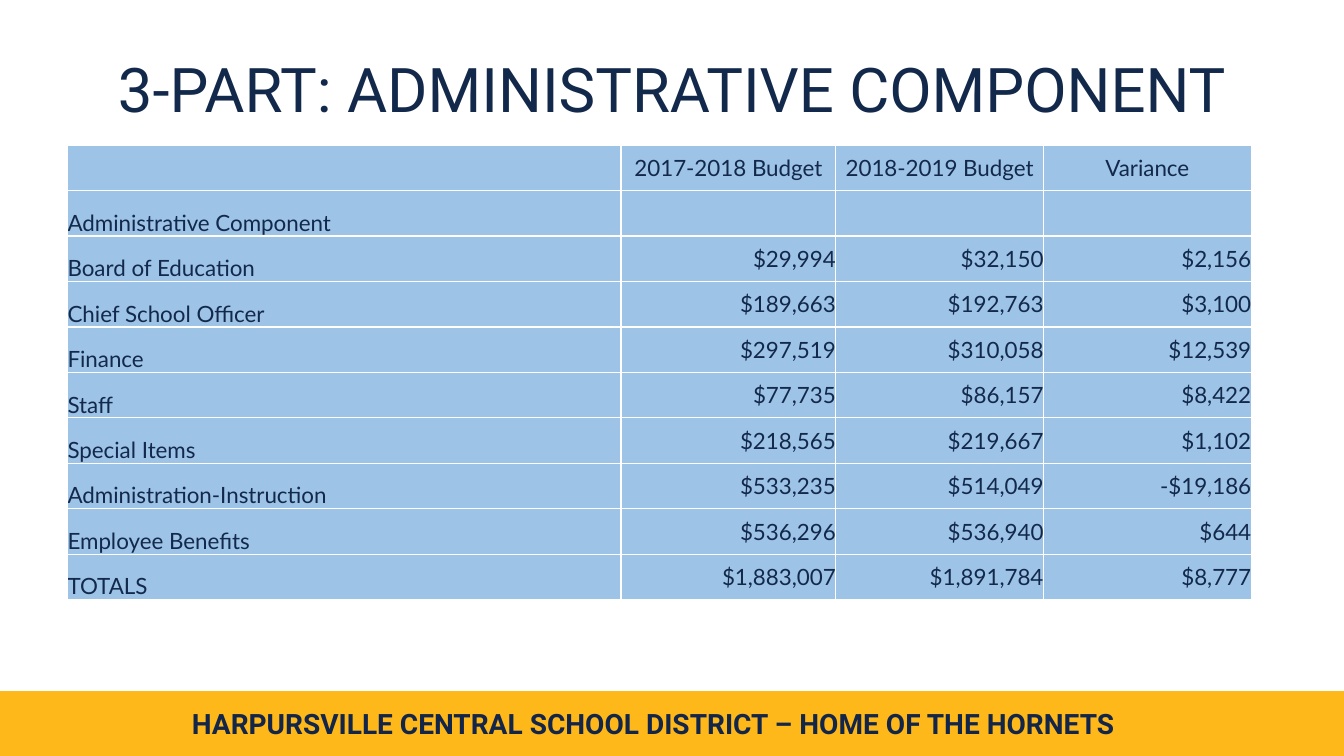
from pptx import Presentation
from pptx import util as u
from pptx.dml.color import RGBColor
from pptx.enum import shapes, text
from pptx.oxml import parse_xml
from pptx.oxml.ns import nsdecls

NAVY, GOLD, BLUE, WHITE = "13294B", "FFB819", "9DC3E6", "FFFFFF"
COLUMN_WIDTHS = [5.49, 2.13, 2.06, 2.06]
BUDGET = [
    ["", "2017-2018 Budget", "2018-2019 Budget", "Variance"],
    ["Administrative Component", "", "", ""],
    ["Board of Education", "$29,994", "$32,150", "$2,156"],
    ["Chief School Officer", "$189,663", "$192,763", "$3,100"],
    ["Finance", "$297,519", "$310,058", "$12,539"],
    ["Staff", "$77,735", "$86,157", "$8,422"],
    ["Special Items", "$218,565", "$219,667", "$1,102"],
    ["Administration-Instruction", "$533,235", "$514,049", "-$19,186"],
    ["Employee Benefits", "$536,296", "$536,940", "$644"],
    ["TOTALS", "$1,883,007", "$1,891,784", "$8,777"],
]


def rgb(color):
    """Turn a hex string into a colour."""
    return RGBColor.from_string(color)


def paint(fill, color):
    """Make a fill solid in one colour."""
    fill.solid()
    fill.fore_color.rgb = rgb(color)


def add_run(p, words, size, font, color=NAVY, bold=False):
    """Add one formatted run to a paragraph."""
    r = p.add_run()
    r.text = words
    r.font.size, r.font.name, r.font.bold = u.Pt(size), font, bold
    r.font.color.rgb = rgb(color)


def add_footer(s, left, top, width, height):
    """Draw the gold band with the district motto."""
    band = s.shapes.add_shape(shapes.MSO_SHAPE.RECTANGLE, u.Inches(left),
                              u.Inches(top), u.Inches(width), u.Inches(height))
    band.shadow.inherit = False
    paint(band.fill, GOLD)
    band.line.color.rgb = rgb(GOLD)
    band.line.width = u.Pt(1)
    motto = s.shapes.add_textbox(u.Inches(left + 1.76), u.Inches(top + 0.1),
                                 u.Inches(9.44), u.Inches(0.44))
    tf = motto.text_frame
    tf.word_wrap = True
    p = tf.paragraphs[0]
    p.alignment = text.PP_ALIGN.CENTER
    add_run(p, "HARPURSVILLE CENTRAL SCHOOL DISTRICT – HOME OF THE HORNETS",
            20, "Roboto", "132649", True)


def add_title(s, left, top, width, height):
    """Place and format the title placeholder."""
    title = s.shapes.title
    title.left, title.top = u.Inches(left), u.Inches(top)
    title.width, title.height = u.Inches(width), u.Inches(height)
    paint(title.fill, WHITE)
    tf = title.text_frame
    tf.auto_size = text.MSO_AUTO_SIZE.NONE
    tf.word_wrap = True
    tf.vertical_anchor = text.MSO_ANCHOR.MIDDLE
    p = tf.paragraphs[0]
    p.alignment = text.PP_ALIGN.CENTER
    p.line_spacing = 0.9
    add_run(p, "3-PART: ADMINISTRATIVE COMPONENT", 44, "Roboto")


def format_cell(cell, words, align, anchor):
    """Fill, border and write one table cell."""
    cell.margin_left = cell.margin_right = 0
    cell.margin_top = cell.margin_bottom = 0
    cell.vertical_anchor = anchor
    props = cell._tc.get_or_add_tcPr()
    for side in ("lnL", "lnR", "lnT", "lnB"):
        props.append(parse_xml(
            f'<a:{side} {nsdecls("a")} w="{u.Pt(1)}"><a:solidFill>'
            f'<a:srgbClr val="{WHITE}"/></a:solidFill></a:{side}>'))
    paint(cell.fill, BLUE)
    p = cell.text_frame.paragraphs[0]
    p.alignment = align
    if words:
        add_run(p, words, 16, "Lato")


def add_budget_table(s, left, top, width, height):
    """Build the budget comparison table."""
    table = s.shapes.add_table(len(BUDGET), len(COLUMN_WIDTHS), u.Inches(left),
                               u.Inches(top), u.Inches(width), u.Inches(height)).table
    table.first_row = table.horz_banding = False
    for column, column_width in zip(table.columns, COLUMN_WIDTHS):
        column.width = u.Inches(column_width)
    for i, row in enumerate(BUDGET):
        for j, words in enumerate(row):
            align, anchor = text.PP_ALIGN.RIGHT, text.MSO_ANCHOR.MIDDLE
            if i == 0:
                align = text.PP_ALIGN.CENTER
            elif j == 0:
                align, anchor = text.PP_ALIGN.LEFT, text.MSO_ANCHOR.BOTTOM
            format_cell(table.cell(i, j), words, align, anchor)


def main():
    """Build and save the slide."""
    prs = Presentation()
    prs.slide_width, prs.slide_height = u.Inches(13.33), u.Inches(7.5)
    s = prs.slides.add_slide(prs.slide_layouts[5])
    add_footer(s, 0, 6.86, 13.33, 0.63)
    add_title(s, 0.92, 0.4, 11.5, 1.04)
    add_budget_table(s, 0.67, 1.44, 11.74, 4.51)
    prs.save("out.pptx")


if __name__ == "__main__":
    main()
